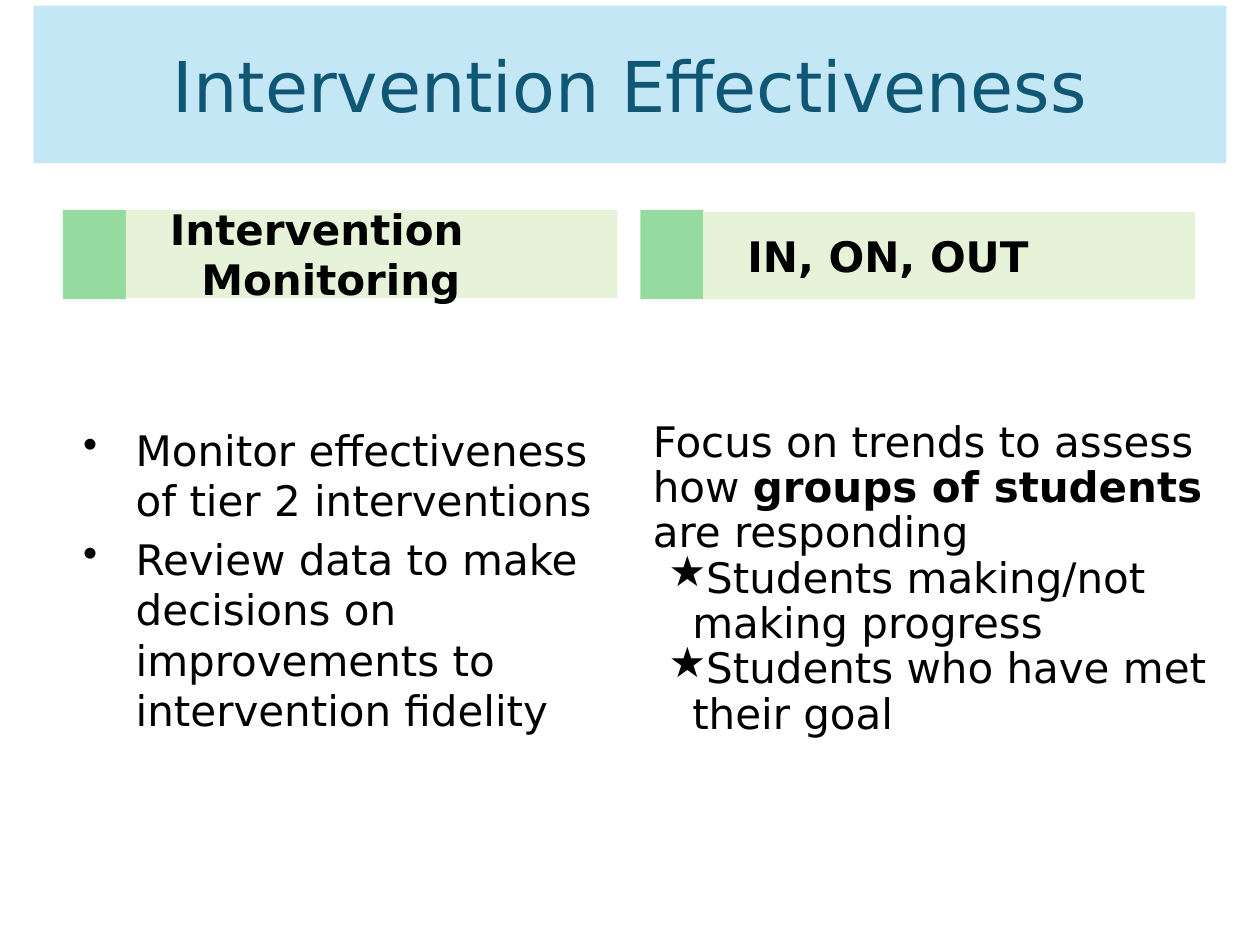
from lxml import etree
from pptx import Presentation
from pptx.dml.color import RGBColor
from pptx.enum.shapes import MSO_SHAPE
from pptx.enum.text import MSO_ANCHOR, MSO_AUTO_SIZE, PP_ALIGN
from pptx.oxml.ns import qn
from pptx.util import Pt

RECTANGLE = MSO_SHAPE.RECTANGLE
MIDDLE = MSO_ANCHOR.MIDDLE
NO_AUTOFIT = MSO_AUTO_SIZE.NONE
LEFT, CENTER = PP_ALIGN.LEFT, PP_ALIGN.CENTER

FONT = "DejaVu Sans"
BLACK = RGBColor(0x00, 0x00, 0x00)
TITLE_TEXT = RGBColor(0x10, 0x57, 0x75)
TITLE_FILL = RGBColor(0xA9, 0xDC, 0xF2)
ACCENT_GREEN = RGBColor(0x95, 0xDA, 0x9F)
PALE_GREEN = RGBColor(0xE7, 0xF3, 0xD8)


def write_text(box, paragraphs, size=24, color=BLACK, bold=False, align=LEFT,
               bullet=None, plain_first=False, margin=0, indent=0,
               space_before=0, line_spacing=1.0):
    frame = box.text_frame
    frame.word_wrap = True
    frame.auto_size = NO_AUTOFIT
    frame.vertical_anchor = MIDDLE
    for index, spans in enumerate(paragraphs):
        para = frame.paragraphs[0] if index == 0 else frame.add_paragraph()
        properties = para._p.get_or_add_pPr()
        if not (plain_first and index == 0):
            properties.set("marL", str(Pt(margin)))
            properties.set("indent", str(Pt(indent)))
            if bullet:
                etree.SubElement(properties, qn("a:buChar")).set("char", bullet)
        para.alignment = align
        para.line_spacing = line_spacing
        para.space_before = Pt(space_before if index else 0)
        for text, emphasis in spans:
            span = para.add_run()
            span.text = text
            span.font.name = FONT
            span.font.size = Pt(size)
            span.font.bold = bold or emphasis
            span.font.color.rgb = color


def add_block(page, left, top, width, height, color):
    block = page.shapes.add_shape(RECTANGLE, Pt(left), Pt(top), Pt(width), Pt(height))
    block.shadow.inherit = False
    block.fill.solid()
    block.fill.fore_color.rgb = color
    block.line.fill.background()
    return block


deck = Presentation()
deck.slide_width, deck.slide_height = Pt(720), Pt(540)
page = deck.slides.add_slide(deck.slide_layouts[5])

title = page.shapes.title
title.left, title.top, title.width, title.height = Pt(19.2), Pt(3.2), Pt(681.6), Pt(90)
title.fill.solid()
title.fill.fore_color.rgb = TITLE_FILL
title_color = title.fill._xPr.find(".//" + qn("a:srgbClr"))
etree.SubElement(title_color, qn("a:alpha")).set("val", "68000")
write_text(title, [[("Intervention Effectiveness", False)]],
           size=40, color=TITLE_TEXT, align=CENTER)

monitoring = [
    [("Monitor effectiveness of tier 2 interventions", False)],
    [("Review data to make decisions on improvements to intervention fidelity", False)],
]
trends = [
    [("Focus on trends to assess how ", False), ("groups of students ", True),
     ("are responding", False)],
    [("Students making/not making progress", False)],
    [("Students who have met their goal", False)],
]
columns = [
    ("Intervention Monitoring", 36, 120, 34.5, 318.5, monitoring,
     dict(bullet="•", margin=36, indent=-30, space_before=4.8)),
    ("IN, ON, OUT", 366, 121, 366, 335.5, trends,
     dict(bullet="★", plain_first=True, margin=22.5, indent=-13.5, line_spacing=0.9)),
]
for heading, left, heading_top, body_left, body_width, paragraphs, style in columns:
    add_block(page, left, 120, 36, 51, ACCENT_GREEN)
    header = add_block(page, left + 36, heading_top, 280.8, 50.2, PALE_GREEN)
    write_text(header, [[(heading, False)]], bold=True, margin=36, indent=-18)
    body = page.shapes.add_textbox(Pt(body_left), Pt(171.2), Pt(body_width), Pt(319.8))
    write_text(body, paragraphs, **style)

deck.save("out.pptx")
